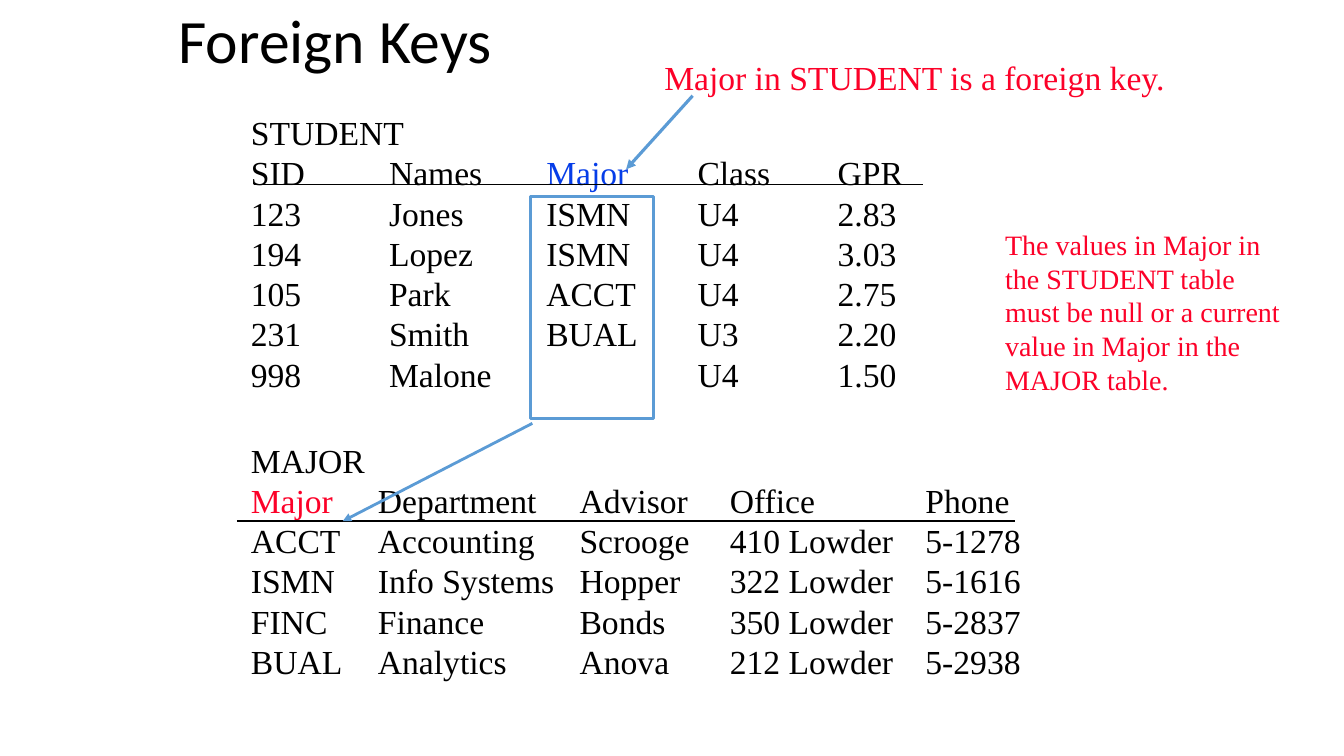
from pptx import Presentation
from pptx.dml.color import RGBColor
from pptx.enum.shapes import MSO_CONNECTOR as CONN, MSO_SHAPE as SHAPE
from pptx.enum.text import MSO_ANCHOR as ANCHOR, MSO_AUTO_SIZE as FIT, PP_ALIGN as ALIGN
from pptx.oxml.ns import qn
from pptx.util import Emu, Pt
from lxml.etree import SubElement

PX = 9144  # 100 px to the inch
BLACK, RED, BLUE, STEEL = "000000", "FC0128", "063DE8", "5B9BD5"


def px(n):
    return Emu(n * PX)


def rgb(color):
    return RGBColor.from_string(color)


class SlideBuilder:
    font = "Times New Roman"

    def __init__(self, prs):
        self.s = prs.slides.add_slide(prs.slide_layouts[5])

    def run(self, p, text, size, color=BLACK, font=None):
        r = p.add_run()
        r.text = text
        style = {"name": font or self.font, "size": Pt(size), "bold": False}
        for key, value in style.items():
            setattr(r.font, key, value)
        r.font.color.rgb = rgb(color)

    def title(self, text, x, y, w, h):
        sp = self.s.shapes.title
        box = {"left": x, "top": y, "width": w, "height": h}
        for key, value in box.items():
            setattr(sp, key, px(value))
        tf = sp.text_frame
        tf.auto_size, tf.vertical_anchor = FIT.NONE, ANCHOR.MIDDLE
        p = tf.paragraphs[0]
        p.alignment, p.line_spacing = ALIGN.LEFT, 0.9
        self.run(p, text, 44, font="Calibri")

    def text(self, lines, x, y, w, h, size=24, color=BLACK, tabs=(), marks=None):
        """Write lines; marks maps (line, column) to a colour."""
        marks = marks or {}
        tf = self.s.shapes.add_textbox(px(x), px(y), px(w), px(h)).text_frame
        tf.word_wrap = True
        for i, line in enumerate(lines):
            p = tf.paragraphs[0] if i == 0 else tf.add_paragraph()
            if tabs:
                tab_list = SubElement(p._p.get_or_add_pPr(), qn("a:tabLst"))
                for pos in tabs:
                    SubElement(tab_list, qn("a:tab"), pos=str(px(pos)), algn="l")
            for j, cell in enumerate(line.split("\t")):
                if j:
                    self.run(p, "\t", size, color)
                if cell:
                    self.run(p, cell, size, marks.get((i, j), color))

    def line(self, x1, y1, x2, y2, color=BLACK, width=1, arrow=False):
        c = self.s.shapes.add_connector(CONN.STRAIGHT, px(x1), px(y1), px(x2), px(y2))
        c.line.color.rgb = rgb(color)
        c.line.width = Pt(width)
        if arrow:
            SubElement(c.line._get_or_add_ln(), qn("a:tailEnd"), type="triangle")
        SubElement(c._element.spPr, qn("a:effectLst"))

    def frame(self, x, y, w, h, color, width):
        sp = self.s.shapes.add_shape(SHAPE.RECTANGLE, px(x), px(y), px(w), px(h))
        sp.shadow.inherit = False
        sp.fill.background()
        sp.line.color.rgb = rgb(color)
        sp.line.width = Pt(width)


def main():
    prs = Presentation()
    prs.slide_width, prs.slide_height = px(1333), px(750)
    b = SlideBuilder(prs)
    b.title("Foreign Keys", 167, 4, 850, 79)

    # MAJOR relation
    b.text(["MAJOR",
            "Major\tDepartment\tAdvisor\tOffice\tPhone",
            "ACCT\tAccounting\tScrooge\t410 Lowder\t5-1278",
            "ISMN\tInfo Systems\tHopper\t322 Lowder\t5-1616",
            "FINC\tFinance\tBonds\t350 Lowder\t5-2837",
            "BUAL\tAnalytics\tAnova\t212 Lowder\t5-2938"],
           239, 431, 790, 252, tabs=(126, 326, 475, 669), marks={(1, 0): RED})
    b.line(235, 517, 1007, 517)

    # STUDENT relation
    b.text(["STUDENT",
            "SID\tNames\tMajor\tClass\tGPR",
            "123\tJones\tISMN\tU4\t2.83",
            "194\tLopez\tISMN\tU4\t3.03",
            "105\tPark\tACCT\tU4\t2.75",
            "231\tSmith\tBUAL\tU3\t2.20",
            "998\tMalone\t\tU4\t1.50"],
           239, 106, 673, 293, tabs=(137, 293, 443, 582), marks={(1, 2): BLUE})
    b.line(252, 183, 915, 183)

    # Foreign key values and their notes
    b.frame(526, 195, 122, 220, STEEL, 2)
    b.text(["The values in Major in the STUDENT table must be null or "
            "a current value in Major in the MAJOR table."],
           987, 221, 294, 178, size=20, color=RED)
    b.line(528, 420, 340, 517, STEEL, 2, arrow=True)
    b.text(["Major in STUDENT is a foreign key."], 649, 52, 555, 50, color=RED)
    b.line(687, 95, 621, 168, STEEL, 2.25, arrow=True)

    prs.save("out.pptx")


if __name__ == "__main__":
    main()
